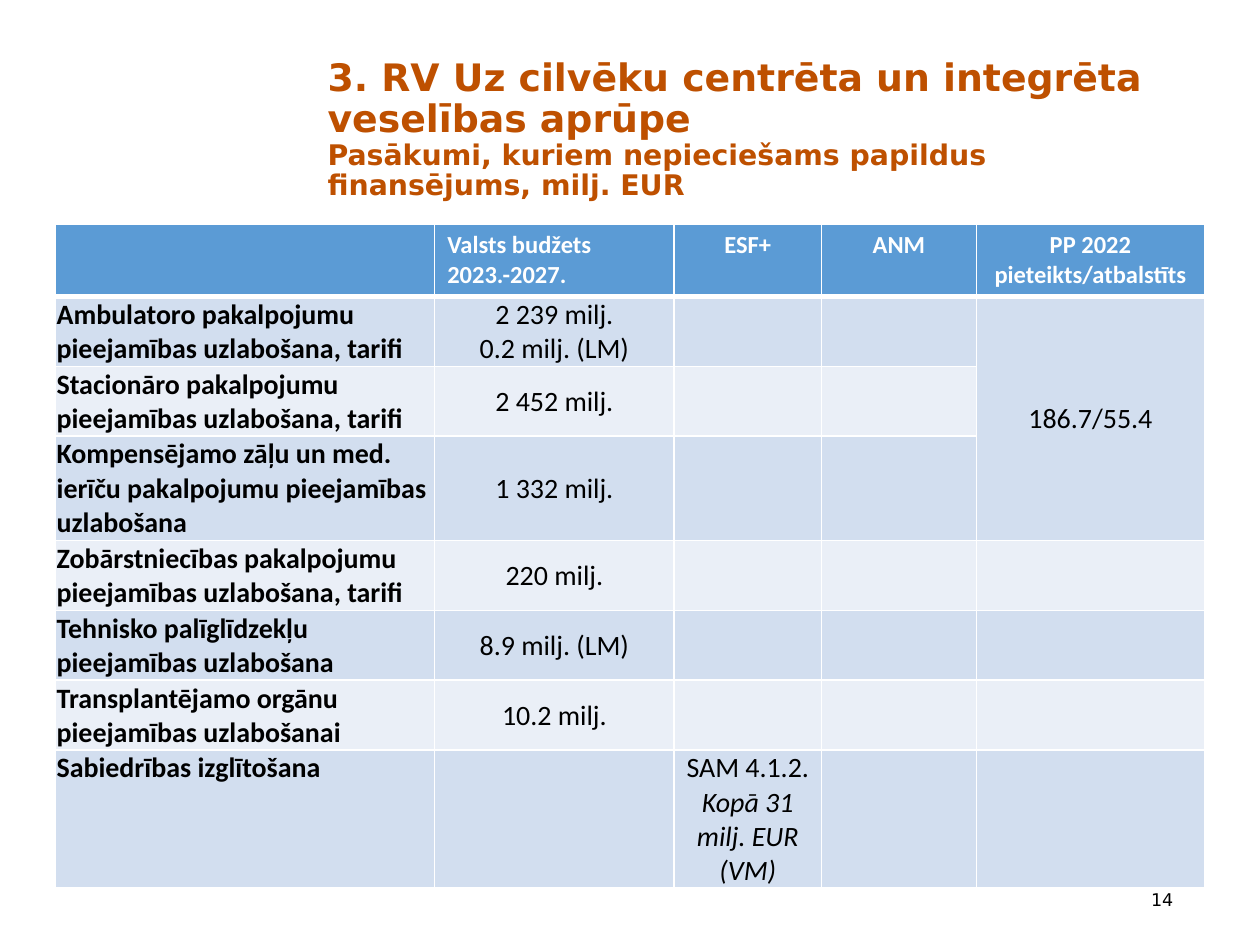
from lxml import etree
from pptx import Presentation
from pptx.dml.color import RGBColor
from pptx.enum import text
from pptx.oxml import ns
from pptx.util import Inches, Pt

HEADERS = ["", "Valsts budžets\n2023.-2027.", "ESF+", "ANM", "PP 2022 pieteikts/atbalstīts"]
MEASURES = [
    ["Ambulatoro pakalpojumu pieejamības uzlabošana, tarifi",
     "2 239 milj.\n0.2 milj. (LM)", "", "", "186.7/55.4"],
    ["Stacionāro pakalpojumu pieejamības uzlabošana, tarifi", "2 452 milj.", "", "", ""],
    ["Kompensējamo zāļu un med. ierīču pakalpojumu pieejamības uzlabošana",
     "1 332 milj.", "", "", ""],
    ["Zobārstniecības pakalpojumu pieejamības uzlabošana, tarifi", "220 milj.", "", "", ""],
    ["Tehnisko palīglīdzekļu pieejamības uzlabošana", "8.9 milj. (LM)", "", "", ""],
    ["Transplantējamo orgānu pieejamības uzlabošanai", "10.2 milj.", "", "", ""],
    ["Sabiedrības izglītošana", "", "SAM 4.1.2.\nKopā 31 milj. EUR (VM)", "", ""],
]
COLUMN_WIDTHS = [3.01, 1.9, 1.17, 1.23, 1.81]
ROW_HEIGHTS = [0.57, 0.55, 0.55, 0.83, 0.55, 0.55, 0.55, 1.09]


def rgb(value):
    return RGBColor.from_string(value)


class SlideBuilder:
    """Holds the slide style and draws each kind of element."""

    heading_font, table_font = "DejaVu Sans", "Calibri"
    accent, header_fill, bands = "BE5000", "5B9BD5", ("D2DEEF", "EAEFF7")
    white, black = "FFFFFF", "000000"

    def __init__(self, presentation):
        self.slide = presentation.slides.add_slide(presentation.slide_layouts[5])

    def style(self, run, font, size, color, bold=False):
        run.font.name, run.font.size, run.font.bold = font, Pt(size), bold
        run.font.color.rgb = rgb(color)

    def title(self, heading, subtitle, left, top, width, height):
        title = self.slide.shapes.title
        title.left, title.top, title.width, title.height = map(Inches, (left, top, width, height))
        frame = title.text_frame
        frame.text = f"{heading}\v{subtitle}"
        frame.vertical_anchor = text.MSO_ANCHOR.TOP
        frame.auto_size = text.MSO_AUTO_SIZE.NONE
        paragraph = frame.paragraphs[0]
        paragraph.alignment, paragraph.line_spacing = text.PP_ALIGN.LEFT, 0.9
        for run, size in zip(paragraph.runs, (21.6, 16.2)):
            self.style(run, self.heading_font, size, self.accent, True)

    def page_number(self, number, left, top, width, height):
        box = self.slide.shapes.add_textbox(*map(Inches, (left, top, width, height)))
        frame = box.text_frame
        frame.word_wrap, frame.vertical_anchor = True, text.MSO_ANCHOR.MIDDLE
        frame.text = number
        frame.paragraphs[0].alignment = text.PP_ALIGN.RIGHT
        self.style(frame.paragraphs[0].runs[0], self.heading_font, 10, self.black)

    def borders(self, cell, bottom):
        properties = cell._tc.get_or_add_tcPr()
        for side, width in (("L", 1), ("R", 1), ("T", 1), ("B", bottom)):
            line = etree.SubElement(properties, ns.qn(f"a:ln{side}"), w=str(Pt(width)))
            fill = etree.SubElement(line, ns.qn("a:solidFill"))
            etree.SubElement(fill, ns.qn("a:srgbClr"), val=self.white)

    def cell(self, cell, content, row, column):
        header, label = row == 0, column == 0
        self.borders(cell, 3 if header else 1)
        cell.fill.solid()
        cell.fill.fore_color.rgb = rgb(self.header_fill if header else self.bands[(row - 1) % 2])
        if not content:
            return
        cell.text_frame.text = content
        if not header:
            cell.margin_left = cell.margin_right = cell.margin_top = Inches(0.01)
            cell.margin_bottom = 0
        middle = not header and not label
        cell.vertical_anchor = text.MSO_ANCHOR.MIDDLE if middle else text.MSO_ANCHOR.TOP
        left_aligned = label or (header and column == 1)
        for paragraph in cell.text_frame.paragraphs:
            paragraph.alignment = text.PP_ALIGN.LEFT if left_aligned else text.PP_ALIGN.CENTER
            for run in paragraph.runs:
                self.style(run, self.table_font, 14 if header else 16,
                           self.white if header else self.black, header or label)

    def table(self, rows, widths, heights, left, top):
        frame = self.slide.shapes.add_table(
            len(rows), len(widths), Inches(left), Inches(top),
            Inches(sum(widths)), Inches(sum(heights)))
        table = frame.table
        for column, width in zip(table.columns, widths):
            column.width = Inches(width)
        for row, height in zip(table.rows, heights):
            row.height = Inches(height)
        for row, contents in enumerate(rows):
            for column, content in enumerate(contents):
                self.cell(table.cell(row, column), content, row, column)
        return table


def main():
    presentation = Presentation()
    presentation.slide_width, presentation.slide_height = Inches(10), Inches(7.5)
    builder = SlideBuilder(presentation)
    builder.title("3. RV Uz cilvēku centrēta un integrēta veselības aprūpe",
                  "Pasākumi, kuriem nepieciešams papildus finansējums, milj. EUR",
                  2.5, 0.42, 6.92, 1.04)
    funding = builder.table([HEADERS] + MEASURES, COLUMN_WIDTHS, ROW_HEIGHTS, 0.44, 1.78)
    funding.cell(1, 4).merge(funding.cell(3, 4))
    total = funding.cell(7, 2).text_frame.paragraphs[1]
    total.runs[0].font.italic = True
    builder.page_number("14", 8.56, 6.94, 0.85, 0.4)
    presentation.save("out.pptx")


if __name__ == "__main__":
    main()
